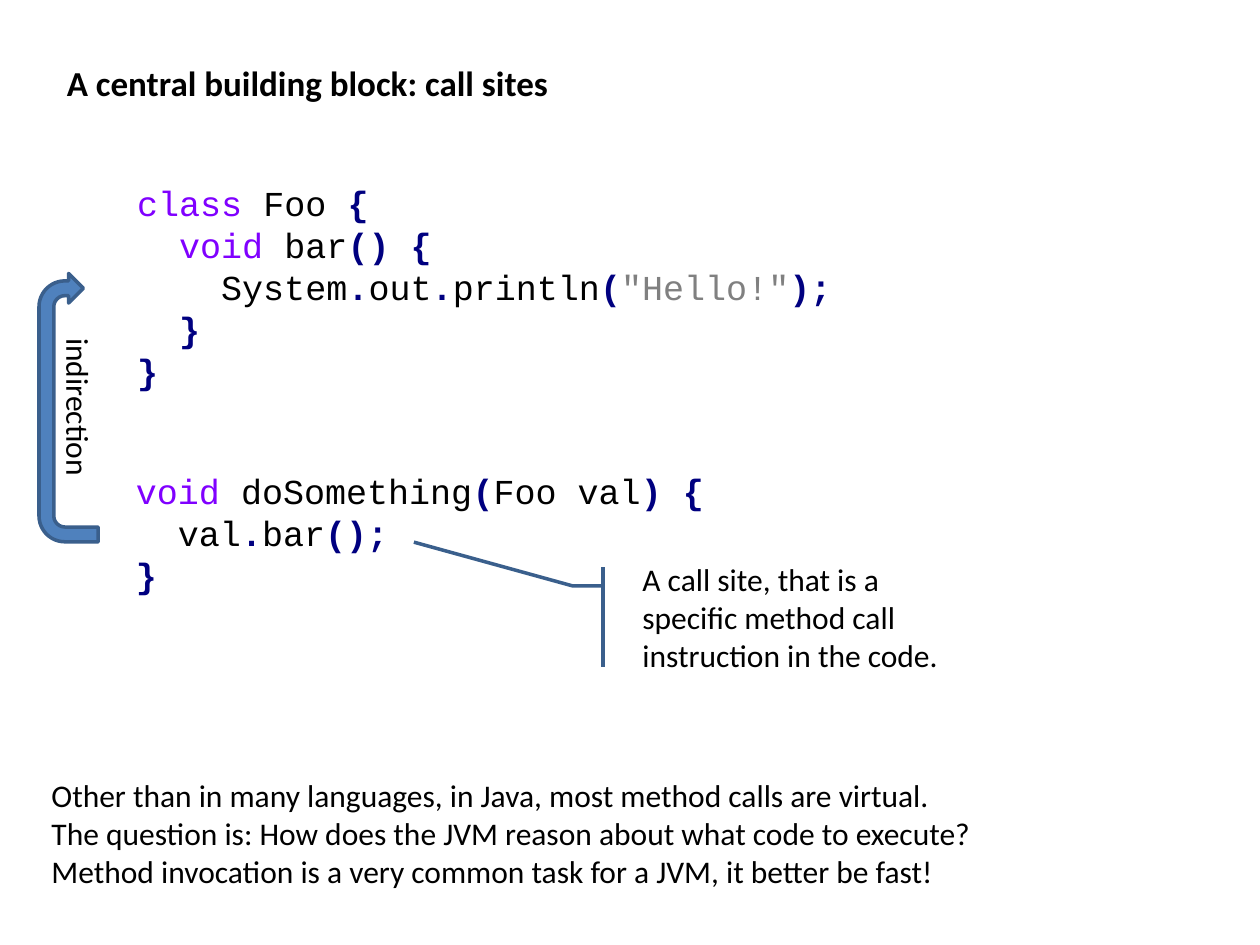
from dataclasses import dataclass

from pptx import Presentation, util as u
from pptx.dml.color import RGBColor
from pptx.enum import shapes, text


@dataclass(frozen=True)
class Theme:
    body_font: str = "Calibri"
    code_font: str = "Courier New"
    heading: int = 20
    code: int = 20
    body: int = 18
    line: float = 2
    ink: str = "000000"
    keyword: str = "8000FF"
    symbol: str = "000080"
    string: str = "808080"
    accent: str = "4F81BD"
    outline: str = "3A5F8C"


THEME = Theme()

# Content: code lines are lists of (token kind, text)
TITLE = "A central building block: call sites"
CLASS_CODE = [
    [("keyword", "class "), ("ink", "Foo "), ("symbol", "{")],
    [("ink", "  "), ("keyword", "void "), ("ink", "bar"), ("symbol", "() {")],
    [("ink", "    System"), ("symbol", "."), ("ink", "out"), ("symbol", "."),
     ("ink", "println"), ("symbol", "("), ("string", '"Hello!"'), ("symbol", ");")],
    [("ink", "  "), ("symbol", "}")],
    [("symbol", "}")],
]
CALLER_CODE = [
    [("keyword", "void "), ("ink", "doSomething"), ("symbol", "("),
     ("ink", "Foo val"), ("symbol", ") {")],
    [("ink", "  val"), ("symbol", "."), ("ink", "bar"), ("symbol", "();")],
    [("symbol", "}")],
]
CALLOUT = "A call site, that is a specific method call instruction in the code."
INDIRECTION = "indirection"
REMARKS = [
    "Other than in many languages, in Java, most method calls are virtual.",
    "The question is: How does the JVM reason about what code to execute?",
    "Method invocation is a very common task for a JVM, it better be fast!",
]

# Places in inches: left, top, width, height
PLACES = {
    "title": (0.43, 0.44, 4.09, 0.44),
    "class": (0.99, 1.39, 8.9, 2.46),
    "callout": (5, 4.5, 2.68, 0.79),
    "caller": (0.98, 3.68, 5, 1.11),
    "arrow": (-0.52, 3, 2.13, 0.47),
    "remarks": (0.31, 6.11, 7.59, 1.01),
    "indirection": (-0.03, 3.04, 1.31, 0.4),
}
CALLOUT_BENDS = (0.19, -0.08, 0.19, -0.17, -0.25, -0.64)


def place(name):
    return [u.Inches(value) for value in PLACES[name]]


def plain(*lines):
    return [[("ink", line)] for line in lines]


def write(box, lines, *, font=THEME.body_font, size=THEME.body, bold=False,
          wrap=True, grow=True, anchor=text.MSO_ANCHOR.TOP):
    """Fill a shape with lines of coloured tokens; symbols are always bold."""
    frame = box.text_frame
    frame.word_wrap = wrap
    frame.auto_size = (text.MSO_AUTO_SIZE.SHAPE_TO_FIT_TEXT if grow
                       else text.MSO_AUTO_SIZE.NONE)
    frame.vertical_anchor = anchor
    for index, line in enumerate(lines):
        para = frame.add_paragraph() if index else frame.paragraphs[0]
        para.alignment = text.PP_ALIGN.LEFT
        for kind, words in line:
            span = para.add_run()
            span.text = words
            span.font.name = font
            span.font.size = u.Pt(size)
            span.font.bold = bold or kind == "symbol"
            span.font.color.rgb = RGBColor.from_string(getattr(THEME, kind))


def add_text(page, name, lines, **style):
    box = page.shapes.add_textbox(*place(name))
    write(box, lines, **style)
    return box


def add_outlined(page, kind, name, fill=None):
    shape = page.shapes.add_shape(kind, *place(name))
    shape.shadow.inherit = False
    if fill:
        shape.fill.solid()
        shape.fill.fore_color.rgb = RGBColor.from_string(fill)
    else:
        shape.fill.background()
    shape.line.color.rgb = RGBColor.from_string(THEME.outline)
    shape.line.width = u.Pt(THEME.line)
    return shape


def main():
    deck = Presentation()
    deck.slide_width, deck.slide_height = u.Inches(10), u.Inches(7.5)
    page = deck.slides.add_slide(deck.slide_layouts.get_by_name("Title Only"))

    # Title
    title = page.shapes.title
    title.left, title.top, title.width, title.height = place("title")
    write(title, plain(TITLE), size=THEME.heading, bold=True, wrap=False)

    # Code with its callout
    code_style = dict(font=THEME.code_font, size=THEME.code)
    add_text(page, "class", CLASS_CODE, **code_style)
    callout = add_outlined(
        page, shapes.MSO_SHAPE.LINE_CALLOUT_2_ACCENT_BAR, "callout")
    for index, bend in enumerate(CALLOUT_BENDS):
        callout.adjustments[index] = bend
    write(callout, plain(CALLOUT), grow=False, anchor=text.MSO_ANCHOR.MIDDLE)
    add_text(page, "caller", CALLER_CODE, **code_style)

    # Indirection from the call back to the method
    arrow = add_outlined(page, shapes.MSO_SHAPE.U_TURN_ARROW, "arrow", THEME.accent)
    arrow.rotation = 270
    label = add_text(page, "indirection", plain(INDIRECTION), wrap=False)
    label.rotation = 90

    # Remarks
    add_text(page, "remarks", plain(*REMARKS), wrap=False)

    deck.save("out.pptx")


if __name__ == "__main__":
    main()
